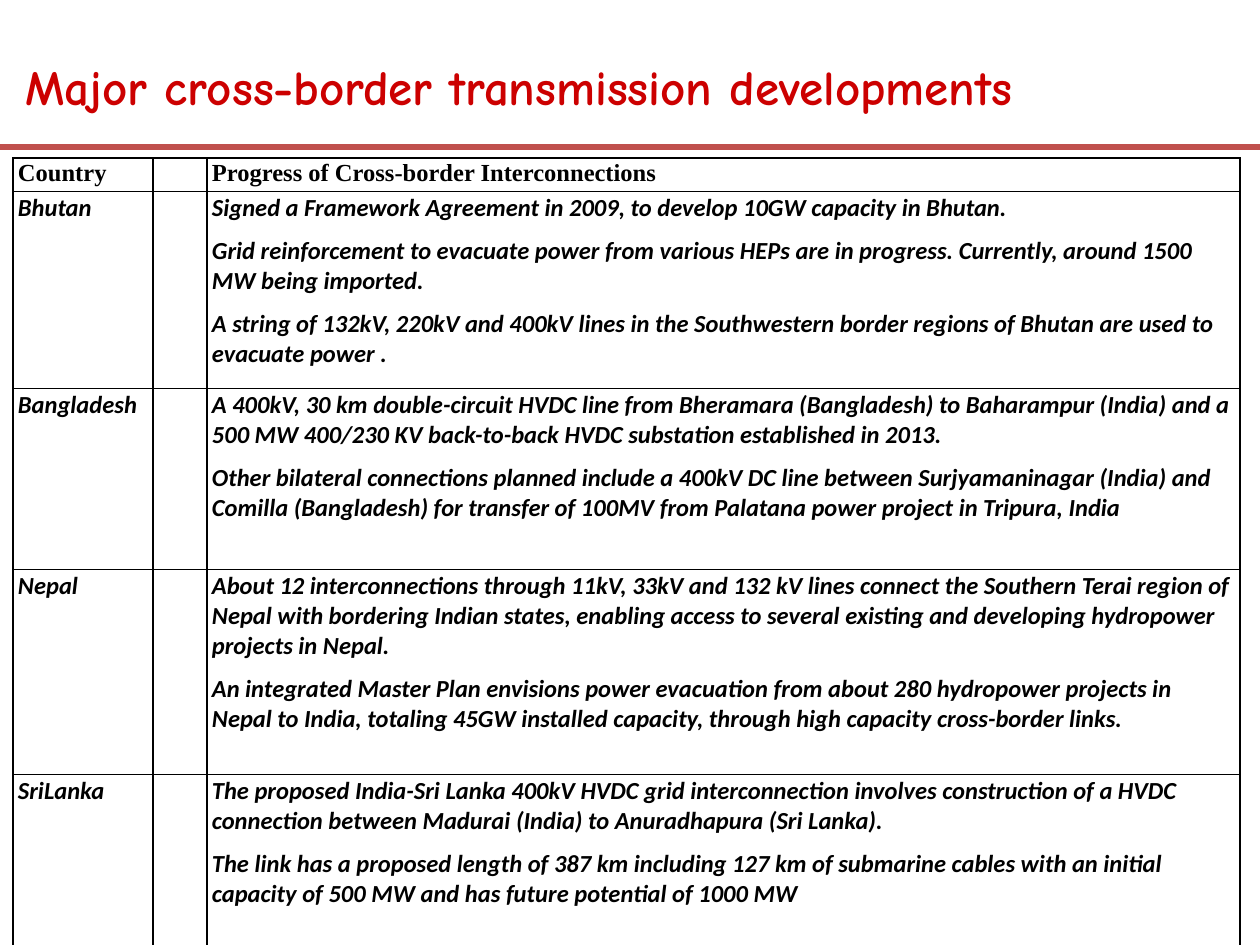
from lxml import etree
from pptx import Presentation, util as u
from pptx.dml.color import RGBColor
from pptx.enum import shapes, text
from pptx.oxml.ns import qn

COLORS = {"title": "CC0000", "rule": "C0504D", "ink": "000000"}
TITLE = "Major cross-border transmission developments"
HEADER = ("Country", "Progress of Cross-border Interconnections")
COUNTRIES = [
    ("Bhutan", [
        "Signed a Framework Agreement in 2009, to develop 10GW capacity in Bhutan.",
        "Grid reinforcement to evacuate power from various HEPs are in progress. Currently, around 1500 MW being imported.",
        "A string of 132kV, 220kV and 400kV lines in the Southwestern border regions of Bhutan are used to evacuate power .",
    ]),
    ("Bangladesh", [
        "A 400kV, 30 km double-circuit HVDC line from Bheramara (Bangladesh) to Baharampur (India) and a 500 MW 400/230 KV back-to-back HVDC substation established in 2013.",
        "Other bilateral connections planned include a 400kV DC line between Surjyamaninagar (India) and Comilla (Bangladesh) for transfer of 100MV from Palatana power project in Tripura, India",
    ]),
    ("Nepal", [
        "About 12 interconnections through 11kV, 33kV and 132 kV lines connect the Southern Terai region of Nepal with bordering Indian states, enabling access to several existing and developing hydropower projects in Nepal.",
        "An integrated Master Plan envisions power evacuation from about 280 hydropower projects in Nepal to India, totaling 45GW installed capacity, through high capacity cross-border links.",
    ]),
    ("SriLanka", [
        "The proposed India-Sri Lanka 400kV HVDC grid interconnection involves construction of a HVDC connection between Madurai (India) to Anuradhapura (Sri Lanka).",
        "The link has a proposed length of 387 km including 127 km of submarine cables with an initial capacity of 500 MW and has future potential of 1000 MW",
    ]),
]
COLUMN_WIDTHS = [140, 54, 1033]
ROW_HEIGHTS = [33, 197, 181, 205, 194]
EMU_PER_PX = 914400 // 126


def px(n):
    return u.Emu(n * EMU_PER_PX)


def rgb(name):
    return RGBColor.from_string(COLORS[name])


def style(r, font, size, color, italic=False):
    r.font.name = font
    r.font.size = u.Pt(size)
    r.font.bold = True
    r.font.italic = italic
    r.font.color.rgb = rgb(color)


def add_borders(cell):
    tcPr = cell._tc.get_or_add_tcPr()
    for i, side in enumerate(("a:lnL", "a:lnR", "a:lnT", "a:lnB")):
        ln = etree.Element(qn(side), w=str(u.Pt(1)))
        fill = etree.SubElement(ln, qn("a:solidFill"))
        etree.SubElement(fill, qn("a:srgbClr"), val=COLORS["ink"])
        tcPr.insert(i, ln)


def fill_cell(cell, lines, font, italic):
    cell.margin_left = cell.margin_right = px(5)
    cell.margin_top = cell.margin_bottom = px(2)
    cell.fill.background()
    add_borders(cell)
    cell.text_frame.text = "\n".join(lines)
    for p in cell.text_frame.paragraphs:
        p.space_after = u.Pt(7.5)
        for r in p.runs:
            style(r, font, 14, "ink", italic)
        if not p.runs:
            etree.SubElement(p._p, qn("a:endParaRPr"), sz="1400")


prs = Presentation()
prs.slide_width, prs.slide_height = px(1260), px(945)
s = prs.slides.add_slide(prs.slide_layouts[6])

tf = s.shapes.add_textbox(px(13), px(58), px(1216), px(55)).text_frame
tf.word_wrap = True
tf.vertical_anchor = text.MSO_ANCHOR.MIDDLE
tf.text = TITLE
style(tf.paragraphs[0].runs[0], "Comic Neue", 28, "title")

rule = s.shapes.add_connector(shapes.MSO_CONNECTOR.STRAIGHT, px(0), px(147), px(1260), px(147))
rule.line.color.rgb = rgb("rule")
rule.line.width = u.Pt(3)
etree.SubElement(rule._element.spPr, qn("a:effectLst"))

table = s.shapes.add_table(
    len(ROW_HEIGHTS), len(COLUMN_WIDTHS), px(13), px(158),
    px(sum(COLUMN_WIDTHS)), px(sum(ROW_HEIGHTS))).table
table.first_row = table.horz_banding = False
for column, width in zip(table.columns, COLUMN_WIDTHS):
    column.width = px(width)
for row, height in zip(table.rows, ROW_HEIGHTS):
    row.height = px(height)

rows = [(HEADER[0], [HEADER[1]])] + COUNTRIES
for i, (country, progress) in enumerate(rows):
    font = "Calibri" if i else "Times New Roman"
    for j, lines in enumerate(([country], [], progress)):
        fill_cell(table.cell(i, j), lines, font, italic=i > 0)

prs.save("out.pptx")
